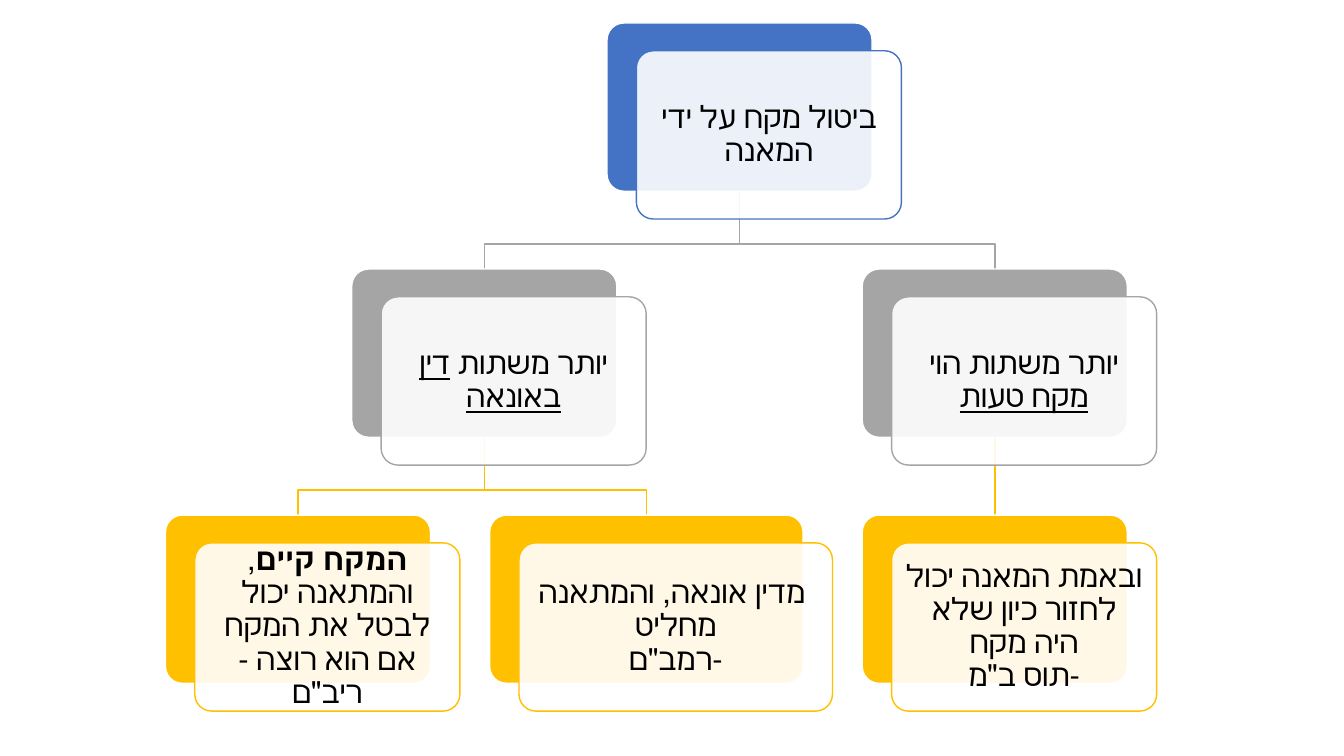
from dataclasses import dataclass, field
from typing import Any

from lxml.etree import SubElement
from pptx import Presentation
from pptx.dml.color import RGBColor
from pptx.enum.lang import MSO_LANGUAGE_ID
from pptx.enum.shapes import MSO_CONNECTOR, MSO_SHAPE
from pptx.enum.text import MSO_ANCHOR, PP_ALIGN
from pptx.oxml.ns import qn
from pptx.util import Cm, Pt


@dataclass(frozen=True)
class Theme:
    levels: tuple = (RGBColor(0x44, 0x72, 0xC4), RGBColor(0xA5, 0xA5, 0xA5),
                     RGBColor(0xFF, 0xC0, 0x00))
    paper: RGBColor = RGBColor(0xFF, 0xFF, 0xFF)
    ink: RGBColor = RGBColor(0, 0, 0)
    font: str = "Calibri"
    size: Pt = Pt(22)
    line: Pt = Pt(1)


THEME = Theme()
CARD_WIDTH, CARD_HEIGHT = Cm(6.68), Cm(4.24)
OFFSET_X, OFFSET_Y = Cm(0.74), Cm(0.7)
FIRST_LEFT, FIRST_TOP = Cm(4.17), Cm(0.58)
LEAF_GAP, LEVEL_STEP = Cm(1.49), Cm(6.2)
BEND_RISE = Cm(0.63)
INSET = Cm(0.23)


@dataclass
class Ruling:
    """A tree node; each line holds (text, style) parts."""
    lines: list
    children: list = field(default_factory=list)
    width: int = CARD_WIDTH
    left: int = 0
    level: int = 0
    back: Any = None

    @property
    def top(self):
        return FIRST_TOP + self.level * LEVEL_STEP

    @property
    def center(self):
        return self.left + self.width // 2


def ruling_tree():
    upheld = Ruling([[("המקח קיים", "bold"),
                      (", והמתאנה יכול לבטל את המקח אם הוא רוצה -ריב\"ם", "")]])
    decides = Ruling([[(" מדין אונאה, והמתאנה מחליט", "")], [("-רמב\"ם", "")]],
                     width=Cm(7.9))
    retracts = Ruling([[("ובאמת המאנה יכול לחזור כיון שלא היה מקח", "")],
                       [("-תוס ב\"מ", "")]])
    overcharge = Ruling([[("יותר משתות ", ""), ("דין באונאה", "underline")]],
                        [upheld, decides])
    mistake = Ruling([[("יותר משתות הוי ", ""), ("מקח טעות", "underline")]],
                     [retracts])
    return Ruling([[("ביטול מקח על ידי המאנה", "")]], [overcharge, mistake])


def place(ruling, next_left, level=0):
    """Set leaves side by side, centre parents over them; return the next free left."""
    ruling.level = level
    if not ruling.children:
        ruling.left = next_left
        return next_left + ruling.width + LEAF_GAP
    for child in ruling.children:
        next_left = place(child, next_left, level + 1)
    first, last = ruling.children[0], ruling.children[-1]
    ruling.left = (first.left + last.left + last.width - ruling.width) // 2
    return next_left


def add_card(slide, left, top, width, fill, line):
    card = slide.shapes.add_shape(MSO_SHAPE.ROUNDED_RECTANGLE, left, top, width, CARD_HEIGHT)
    card.adjustments[0] = 0.1
    card.shadow.inherit = False
    card.fill.solid()
    card.fill.fore_color.rgb = fill
    card.line.color.rgb = line
    card.line.width = THEME.line
    return card


def make_translucent(card):
    color = card.fill._xPr.find(qn("a:solidFill"))[0]
    SubElement(color, qn("a:alpha"), val="90000")


def write_lines(card, lines):
    frame = card.text_frame
    frame.word_wrap = True
    frame.vertical_anchor = MSO_ANCHOR.MIDDLE
    frame.margin_left = frame.margin_right = INSET
    frame.margin_top = frame.margin_bottom = INSET
    paragraph = frame.paragraphs[0]
    paragraph.alignment = PP_ALIGN.CENTER
    paragraph.line_spacing = 0.9
    paragraph._p.get_or_add_pPr().set("rtl", "1")
    for index, parts in enumerate(lines):
        if index:
            paragraph.add_line_break()
        for text, style in parts:
            run = paragraph.add_run()
            run.text = text
            format_run(run, style)


def format_run(run, style):
    font = run.font
    font.name = THEME.font
    font.size = THEME.size
    font.color.rgb = THEME.ink
    font.bold = style == "bold"
    font.underline = style == "underline"
    font.language_id = MSO_LANGUAGE_ID.HEBREW


def add_ruling(slide, ruling):
    color = THEME.levels[ruling.level]
    ruling.back = add_card(slide, ruling.left, ruling.top, ruling.width, color, THEME.paper)
    front = add_card(slide, ruling.left + OFFSET_X, ruling.top + OFFSET_Y,
                     ruling.width, THEME.paper, color)
    make_translucent(front)
    write_lines(front, ruling.lines)
    for child in ruling.children:
        add_ruling(slide, child)


def straight_link(slide, parent, child):
    link = slide.shapes.add_connector(MSO_CONNECTOR.STRAIGHT, parent.center,
                                      parent.top + CARD_HEIGHT, child.center, child.top)
    link.begin_connect(parent.back, 2)
    link.end_connect(child.back, 0)
    SubElement(link._element.spPr, qn("a:effectLst"))
    return link


def elbow_link(slide, parent, child):
    bend = child.top - BEND_RISE
    builder = slide.shapes.build_freeform(parent.center, parent.top + CARD_HEIGHT)
    builder.add_line_segments([(parent.center, bend), (child.center, bend),
                               (child.center, child.top)], close=False)
    link = builder.convert_to_shape()
    link.fill.background()
    link.shadow.inherit = False
    return link


def add_links(slide, parent):
    """Link a ruling to its children, behind all the cards."""
    for child in parent.children:
        draw = straight_link if len(parent.children) == 1 else elbow_link
        link = draw(slide, parent, child)
        link.line.color.rgb = THEME.levels[child.level]
        link.line.width = THEME.line
        slide.shapes._spTree.insert(2, link._element)
        add_links(slide, child)


def main():
    deck = Presentation()
    deck.slide_width, deck.slide_height = Cm(33.87), Cm(19.05)
    slide = deck.slides.add_slide(deck.slide_layouts[6])
    root = ruling_tree()
    place(root, FIRST_LEFT)
    add_ruling(slide, root)
    add_links(slide, root)
    deck.save("out.pptx")


if __name__ == "__main__":
    main()
